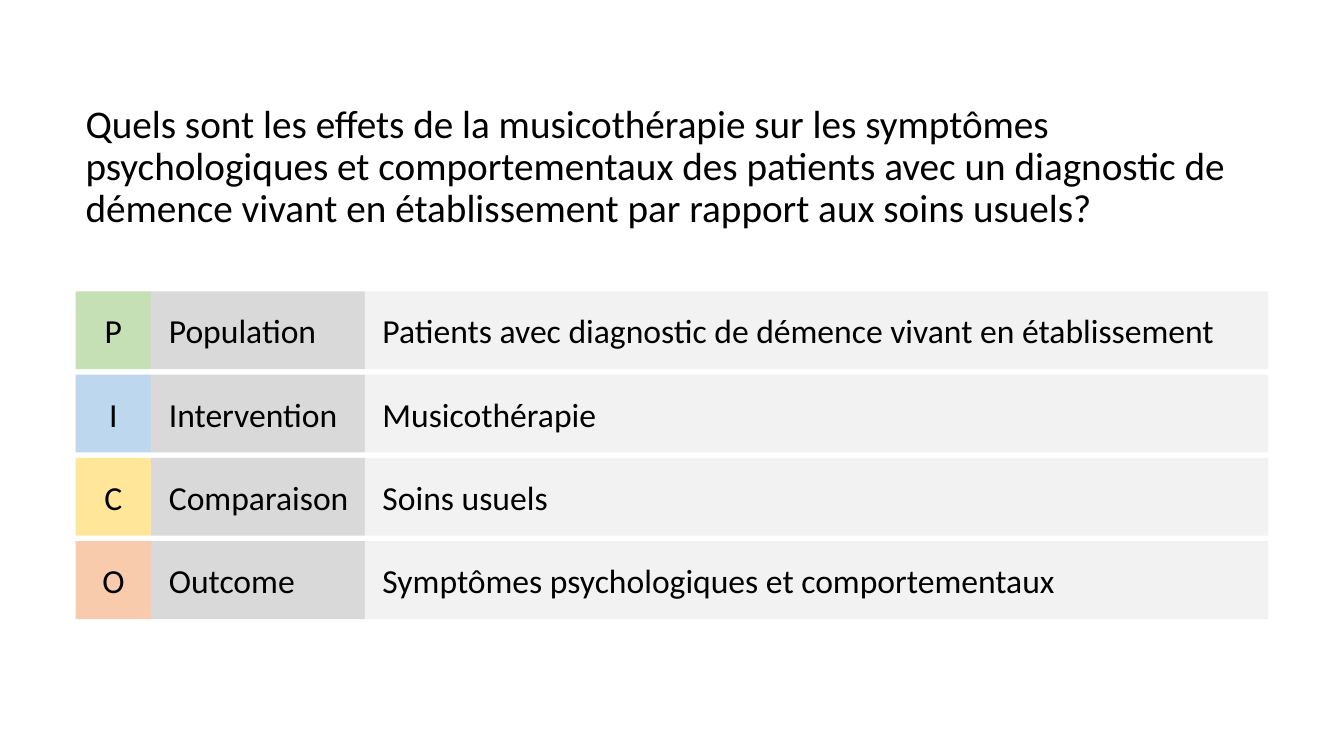
from pptx import Presentation
from pptx.dml.color import RGBColor
from pptx.enum.shapes import MSO_SHAPE
from pptx.enum.text import MSO_ANCHOR, PP_ALIGN
from pptx.util import Pt

RECTANGLE = MSO_SHAPE.RECTANGLE
MIDDLE = MSO_ANCHOR.MIDDLE
LEFT, CENTER = PP_ALIGN.LEFT, PP_ALIGN.CENTER

FONT = "Calibri"
BLACK, LABEL_GREY, ANSWER_GREY = "000000", "D9D9D9", "F2F2F2"
LETTER_X, LABEL_X, ANSWER_X, RIGHT_EDGE = 54, 108, 260.6, 905.8
FIRST_ROW_Y, ROW_PITCH, ROW_HEIGHT = 208.1, 59.5, 55.6
INDENT = 12.6

QUESTION = (
    "Quels sont les effets de la musicothérapie sur les symptômes "
    "psychologiques et comportementaux des patients avec un diagnostic de "
    "démence vivant en établissement par rapport aux soins usuels?"
)
PICO = [
    ("P", "C5E0B4", "Population",
     "Patients avec diagnostic de démence vivant en établissement"),
    ("I", "BDD7EE", "Intervention", "Musicothérapie"),
    ("C", "FFE699", "Comparaison", "Soins usuels"),
    ("O", "F8CBAD", "Outcome", "Symptômes psychologiques et comportementaux"),
]


def color(hex_code):
    """Return the RGB colour of a hex string."""
    return RGBColor.from_string(hex_code)


def write(frame, text, size, align=LEFT):
    """Put one vertically centred paragraph in a text frame."""
    frame.word_wrap = True
    frame.vertical_anchor = MIDDLE
    paragraph = frame.paragraphs[0]
    paragraph.text = text
    paragraph.alignment = align
    paragraph.font.name = FONT
    paragraph.font.size = Pt(size)
    paragraph.font.color.rgb = color(BLACK)
    return paragraph


def add_question(slide):
    """Add the research question above the grid."""
    question = slide.shapes.add_textbox(Pt(54), Pt(22.3), Pt(840), Pt(195.1))
    paragraph = write(question.text_frame, QUESTION, 28)
    paragraph.line_spacing = 0.9
    paragraph.space_before = Pt(10)


def add_cell(slide, left, right, top, fill, text, align=LEFT):
    """Add one filled cell between two horizontal edges."""
    cell = slide.shapes.add_shape(
        RECTANGLE, Pt(left), Pt(top), Pt(right - left), Pt(ROW_HEIGHT))
    cell.shadow.inherit = False
    cell.fill.solid()
    cell.fill.fore_color.rgb = color(fill)
    cell.line.fill.background()
    if align == LEFT:
        cell.text_frame.margin_left = Pt(INDENT)
    write(cell.text_frame, text, 24, align)


def main():
    """Build the slide and save it."""
    presentation = Presentation()
    presentation.slide_width = Pt(960)
    presentation.slide_height = Pt(540)
    slide = presentation.slides.add_slide(presentation.slide_layouts[6])
    add_question(slide)
    for index, (letter, letter_fill, label, answer) in enumerate(PICO):
        top = FIRST_ROW_Y + index * ROW_PITCH
        add_cell(slide, LETTER_X, LABEL_X, top, letter_fill, letter, CENTER)
        add_cell(slide, LABEL_X, ANSWER_X, top, LABEL_GREY, label)
        add_cell(slide, ANSWER_X, RIGHT_EDGE, top, ANSWER_GREY, answer)
    presentation.save("out.pptx")


if __name__ == "__main__":
    main()
